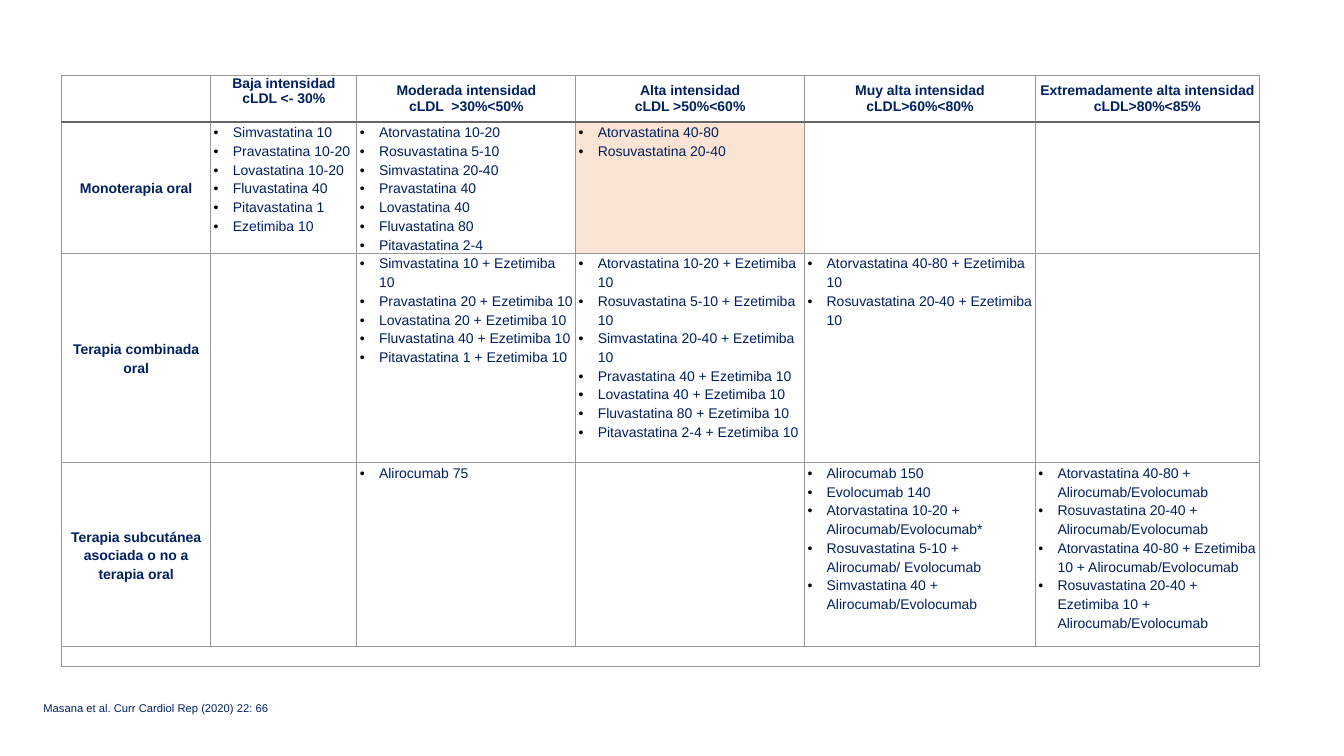
from lxml import etree
from pptx import Presentation
from pptx.dml.color import RGBColor
from pptx.enum.text import MSO_ANCHOR, PP_ALIGN
from pptx.oxml.ns import qn
from pptx.util import Inches, Pt

MID, TOP = MSO_ANCHOR.MIDDLE, MSO_ANCHOR.TOP
CENTER = PP_ALIGN.CENTER
FONT = "Arial"
NAVY, WHITE, PEACH = "002060", "FFFFFF", "FBE4D4"
GREY, DARK, BLACK = "999999", "666666", "000000"

# Grid of the table, in inches
LEFT, UP = 0.61, 0.75
COLS = [1.48, 1.45, 2.17, 2.27, 2.29, 2.22]
ROWS = [0.46, 1.3, 2.08, 1.82, 0.2]

HEADS = [
    [],
    ["Baja intensidad", "cLDL <- 30%"],
    ["Moderada intensidad", "cLDL  >30%<50%"],
    ["Alta intensidad", "cLDL >50%<60%"],
    ["Muy alta intensidad", "cLDL>60%<80%"],
    ["Extremadamente alta intensidad", "cLDL>80%<85%"],
]
# Each therapy with its drugs, by intensity
BODY = [
    ("Monoterapia oral", [
        ["Simvastatina 10", "Pravastatina 10-20", "Lovastatina 10-20",
         "Fluvastatina 40", "Pitavastatina 1", "Ezetimiba 10"],
        ["Atorvastatina 10-20", "Rosuvastatina 5-10", "Simvastatina 20-40",
         "Pravastatina 40", "Lovastatina 40", "Fluvastatina 80",
         "Pitavastatina 2-4"],
        ["Atorvastatina 40-80", "Rosuvastatina 20-40"],
        [],
        [],
    ]),
    ("Terapia combinada oral", [
        [],
        ["Simvastatina 10 + Ezetimiba 10", "Pravastatina 20 + Ezetimiba 10",
         "Lovastatina 20 + Ezetimiba 10", "Fluvastatina 40 + Ezetimiba 10",
         "Pitavastatina 1 + Ezetimiba 10"],
        ["Atorvastatina 10-20 + Ezetimiba 10",
         "Rosuvastatina 5-10 + Ezetimiba 10",
         "Simvastatina 20-40 + Ezetimiba 10",
         "Pravastatina 40 + Ezetimiba 10", "Lovastatina 40 + Ezetimiba 10",
         "Fluvastatina 80 + Ezetimiba 10",
         "Pitavastatina 2-4 + Ezetimiba 10"],
        ["Atorvastatina 40-80 + Ezetimiba 10",
         "Rosuvastatina 20-40 + Ezetimiba 10"],
        [],
    ]),
    ("Terapia subcutánea asociada o no a terapia oral", [
        [],
        ["Alirocumab 75"],
        [],
        ["Alirocumab 150", "Evolocumab 140",
         "Atorvastatina 10-20 + Alirocumab/Evolocumab*",
         "Rosuvastatina 5-10 + Alirocumab/ Evolocumab",
         "Simvastatina 40 + Alirocumab/Evolocumab"],
        ["Atorvastatina 40-80 + Alirocumab/Evolocumab",
         "Rosuvastatina 20-40 + Alirocumab/Evolocumab",
         "Atorvastatina 40-80 + Ezetimiba 10 + Alirocumab/Evolocumab",
         "Rosuvastatina 20-40 + Ezetimiba 10 + Alirocumab/Evolocumab"],
    ]),
]
SOURCE = "Masana et al. Curr Cardiol Rep (2020) 22: 66"


def color(code):
    return RGBColor.from_string(code)


def add_run(para, text, size=10, bold=False):
    run = para.add_run()
    run.text = text
    font = run.font
    font.name, font.size, font.bold = FONT, Pt(size), bold
    font.color.rgb = color(NAVY)


def add_bullet(para):
    props = para._p.get_or_add_pPr()
    props.set("marL", str(Inches(0.19)))
    props.set("indent", str(-Inches(0.19)))
    tint = etree.SubElement(props, qn("a:buClr"))
    etree.SubElement(tint, qn("a:srgbClr"), val=BLACK)
    etree.SubElement(props, qn("a:buFont"), typeface=FONT)
    etree.SubElement(props, qn("a:buChar"), char="•")


def add_edges(cell, row):
    """Draw four borders, with a darker rule under the header."""
    rule = {0: "lnB", 1: "lnT"}.get(row)
    props = cell._tc.get_or_add_tcPr()
    for side in ("lnL", "lnR", "lnT", "lnB"):
        tone, width = (DARK, 1.5) if side == rule else (GREY, 1)
        line = etree.SubElement(props, qn("a:" + side), w=str(Pt(width)))
        fill = etree.SubElement(line, qn("a:solidFill"))
        etree.SubElement(fill, qn("a:srgbClr"), val=tone)


def style_cell(cell, row, fill=WHITE, anchor=TOP):
    cell.margin_left = cell.margin_right = Inches(0.03)
    cell.margin_top = cell.margin_bottom = 0
    cell.vertical_anchor = anchor
    add_edges(cell, row)
    cell.fill.solid()
    cell.fill.fore_color.rgb = color(fill)


def fill_cell(cell, lines, head=False, space=None):
    """Write centred bold lines for a heading, bullets otherwise."""
    frame = cell.text_frame
    for i, text in enumerate(lines):
        para = frame.add_paragraph() if i else frame.paragraphs[0]
        if space:
            para.line_spacing = space
        if head:
            para.alignment = CENTER
        else:
            add_bullet(para)
        add_run(para, text, bold=head)
    if not lines:
        # Keep empty cells from stretching their row
        etree.SubElement(frame.paragraphs[0]._p, qn("a:endParaRPr"),
                         sz=str(1000))


def add_grid(slide):
    frame = slide.shapes.add_table(
        len(ROWS), len(COLS), Inches(LEFT), Inches(UP),
        Inches(sum(COLS)), Inches(sum(ROWS)))
    table = frame.table
    table.first_row = table.horz_banding = False
    for col, width in zip(table.columns, COLS):
        col.width = Inches(width)
    for row, height in zip(table.rows, ROWS):
        row.height = Inches(height)

    # Header row
    for c, lines in enumerate(HEADS):
        cell = table.cell(0, c)
        style_cell(cell, 0, anchor=TOP if c == 1 else MID)
        fill_cell(cell, lines, head=True)

    # Therapy rows
    for r, (name, drugs) in enumerate(BODY, 1):
        label = table.cell(r, 0)
        style_cell(label, r, anchor=MID)
        fill_cell(label, [name], head=True, space=1.2)
        for c, lines in enumerate(drugs, 1):
            cell = table.cell(r, c)
            style_cell(cell, r, PEACH if (r, c) == (1, 3) else WHITE)
            fill_cell(cell, lines, space=1.2)

    # Closing row across the whole table
    last = len(ROWS) - 1
    for c in range(len(COLS)):
        cell = table.cell(last, c)
        style_cell(cell, last)
        fill_cell(cell, [])
    table.cell(last, 0).merge(table.cell(last, len(COLS) - 1))


def add_note(slide, text):
    box = slide.shapes.add_textbox(
        Inches(0.3), Inches(6.89), Inches(10.49), Inches(0.4))
    frame = box.text_frame
    frame.word_wrap = True
    frame.margin_left = frame.margin_right = Inches(0.13)
    frame.margin_top = frame.margin_bottom = Inches(0.13)
    add_run(frame.paragraphs[0], text, size=8)


def main():
    deck = Presentation()
    deck.slide_width, deck.slide_height = Inches(13.33), Inches(7.5)
    slide = deck.slides.add_slide(deck.slide_layouts[6])
    add_grid(slide)
    add_note(slide, SOURCE)
    deck.save("out.pptx")


if __name__ == "__main__":
    main()
